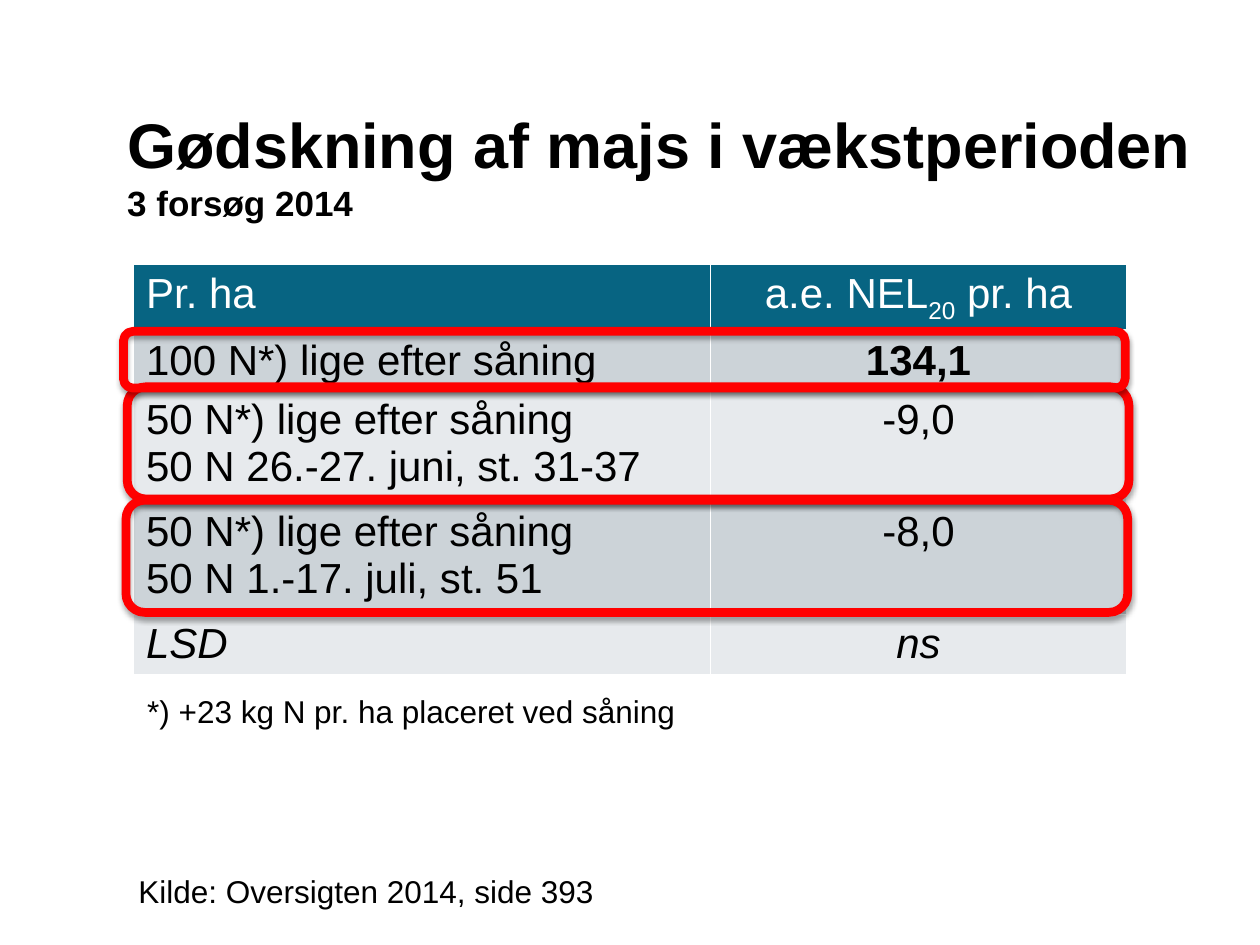
from lxml import etree
from pptx import Presentation
from pptx.dml.color import RGBColor
from pptx.enum import shapes, text
from pptx.oxml import ns
from pptx.util import Inches, Pt

BLACK = RGBColor(0x00, 0x00, 0x00)
WHITE = RGBColor(0xFF, 0xFF, 0xFF)
TEAL = RGBColor(0x07, 0x64, 0x82)
BANDS = [RGBColor(0xE7, 0xEA, 0xED), RGBColor(0xCC, 0xD3, 0xD8)]
RED = RGBColor(0xFF, 0x00, 0x00)

# Content: a cell is a list of paragraphs, a paragraph a list of (text, style)
TITLE = [("Gødskning af majs i vækstperioden", 36), ("3 forsøg 2014", 20)]
ROWS = [
    ([[("Pr. ha", "")]],
     [[("a.e. NEL", ""), ("20", "subscript"), (" pr. ha", "")]]),
    ([[("100 N*) lige efter såning", "")]], [[("134,1", "bold")]]),
    ([[("50 N*) lige efter såning", "")],
      [("50 N 26.-27. juni, st. 31-37", "")]], [[("-9,0", "")]]),
    ([[("50 N*) lige efter såning", "")],
      [("50 N 1.-17. juli, st. 51", "")]], [[("-8,0", "")]]),
    ([[("LSD", "italic")]], [[("ns", "italic")]]),
]
COLUMN_WIDTHS = [4.58, 3.3]
ROW_HEIGHTS = [0.52, 0.46, 0.89, 0.89, 0.48]
FRAMES = [(1.01, 3.07, 0.89), (1, 3.97, 0.89), (0.98, 2.63, 0.45)]
FRAME_WIDTH = 7.95
NOTES = [
    ("*) +23 kg N pr. ha placeret ved såning", 1.07, 5.44, 4.43),
    ("Kilde: Oversigten 2014, side 393", 1, 6.87, 3.99),
]


def add_span(para, words, size, color=BLACK, style=""):
    span = para.add_run()
    span.text = words
    font = span.font
    font.name, font.size = "Arial", Pt(size)
    font.color.rgb = color
    font.bold = style == "bold"
    font.italic = style == "italic"
    if style == "subscript":
        font._element.set("baseline", "-25000")


def add_borders(cell, header):
    properties = cell._tc.get_or_add_tcPr()
    for position, side in enumerate(("lnL", "lnR", "lnT", "lnB")):
        width = Pt(3 if header and side == "lnB" else 1)
        line = etree.Element(ns.qn(f"a:{side}"), w=str(width))
        fill = etree.SubElement(line, ns.qn("a:solidFill"))
        etree.SubElement(fill, ns.qn("a:srgbClr"), val=str(WHITE))
        properties.insert(position, line)


def add_shadow(shape):
    shape.shadow.inherit = False
    effects = shape._element.spPr.find(ns.qn("a:effectLst"))
    shadow = etree.SubElement(
        effects, ns.qn("a:outerShdw"), blurRad=str(Pt(3.1)),
        dist=str(Pt(1.8)), dir="5400000", rotWithShape="0")
    color = etree.SubElement(shadow, ns.qn("a:srgbClr"), val=str(BLACK))
    etree.SubElement(color, ns.qn("a:alpha"), val="35000")


deck = Presentation()
deck.slide_width, deck.slide_height = Inches(10), Inches(7.5)
page = deck.slides.add_slide(deck.slide_layouts[5])

# Title
title = page.shapes.title
title.left, title.top = Inches(0.91), Inches(0.68)
title.width, title.height = Inches(8.82), Inches(1.25)
title.text_frame.vertical_anchor = text.MSO_ANCHOR.MIDDLE
title.text_frame.auto_size = text.MSO_AUTO_SIZE.NONE
heading = title.text_frame.paragraphs[0]
heading.alignment = text.PP_ALIGN.LEFT
for index, (words, size) in enumerate(TITLE):
    if index:
        heading.add_line_break()
    add_span(heading, words, size, style="bold")

# Yield table
table = page.shapes.add_table(
    len(ROWS), len(COLUMN_WIDTHS), Inches(1.06), Inches(2.1),
    Inches(sum(COLUMN_WIDTHS)), Inches(sum(ROW_HEIGHTS))).table
for column, width in zip(table.columns, COLUMN_WIDTHS):
    column.width = Inches(width)
for r, (row, height) in enumerate(zip(ROWS, ROW_HEIGHTS)):
    table.rows[r].height = Inches(height)
    for c, paragraphs in enumerate(row):
        cell = table.cell(r, c)
        cell.fill.solid()
        cell.fill.fore_color.rgb = BANDS[r % 2] if r else TEAL
        add_borders(cell, header=r == 0)
        for p, spans in enumerate(paragraphs):
            frame = cell.text_frame
            para = frame.add_paragraph() if p else frame.paragraphs[0]
            para.alignment = text.PP_ALIGN.CENTER if c else text.PP_ALIGN.LEFT
            for words, style in spans:
                add_span(para, words, 24, BLACK if r else WHITE, style)

# Red frames around the treatments
for left, top, height in FRAMES:
    outline = page.shapes.add_shape(
        shapes.MSO_SHAPE.ROUNDED_RECTANGLE, Inches(left), Inches(top),
        Inches(FRAME_WIDTH), Inches(height))
    outline.fill.background()
    outline.line.color.rgb = RED
    outline.line.width = Pt(5)
    add_shadow(outline)

# Footnote and source
for words, left, top, width in NOTES:
    box = page.shapes.add_textbox(
        Inches(left), Inches(top), Inches(width), Inches(0.4))
    box.text_frame.word_wrap = False
    box.text_frame.auto_size = text.MSO_AUTO_SIZE.SHAPE_TO_FIT_TEXT
    add_span(box.text_frame.paragraphs[0], words, 18)

deck.save("out.pptx")
